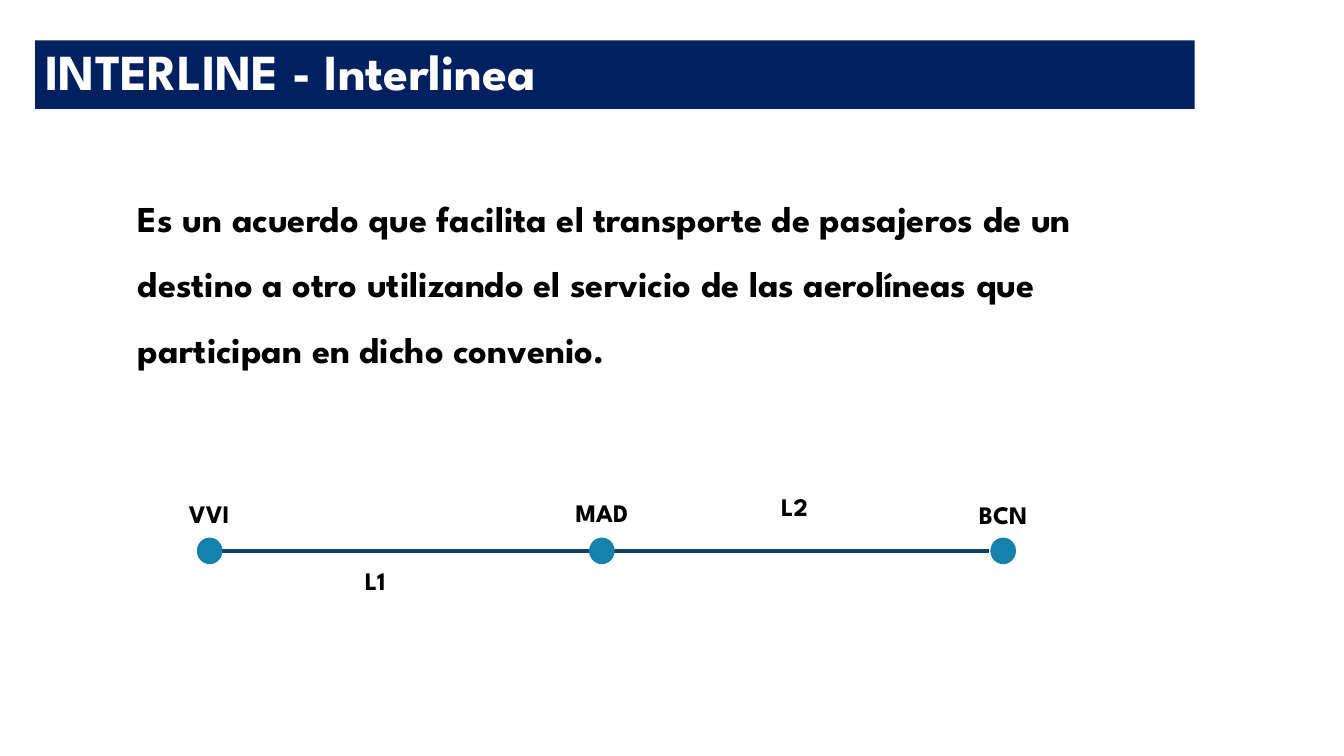
from lxml import etree
from pptx import Presentation
from pptx import util as u
from pptx.dml.color import RGBColor
from pptx.enum import shapes, text
from pptx.oxml.ns import qn

PX = 9144
FONT = "League Spartan"
COLORS = {
    "banner": "002060",
    "white": "FFFFFF",
    "black": "000000",
    "track": "134163",
    "stop": "1482AC",
    "stop_edge": "1580A9",
}


def px(*lengths):
    return [u.Emu(length * PX) for length in lengths]


def color(name):
    return RGBColor.from_string(COLORS[name])


def write(frame, words, size=18, ink="black", align=text.PP_ALIGN.LEFT,
          spacing=None, anchor=text.MSO_ANCHOR.TOP):
    frame.word_wrap = True
    frame.vertical_anchor = anchor
    paragraph = frame.paragraphs[0]
    paragraph.alignment = align
    paragraph.line_spacing = spacing
    run = paragraph.add_run()
    run.text = words
    run.font.name = FONT
    run.font.size = u.Pt(size)
    run.font.bold = True
    run.font.color.rgb = color(ink)


def label(slide, box, words, **style):
    frame = slide.shapes.add_textbox(*px(*box)).text_frame
    write(frame, words, **style)
    frame.auto_size = text.MSO_AUTO_SIZE.SHAPE_TO_FIT_TEXT


def filled(slide, kind, box, fill, edge=None):
    shape = slide.shapes.add_shape(kind, *px(*box))
    shape.shadow.inherit = False
    shape.fill.solid()
    shape.fill.fore_color.rgb = color(fill)
    if edge:
        shape.line.color.rgb = color(edge)
        shape.line.width = u.Pt(1)
    else:
        shape.line.fill.background()
    return shape


def title_banner(slide, box):
    banner = filled(slide, shapes.MSO_SHAPE.RECTANGLE, box, "banner")
    write(banner.text_frame, "INTERLINE - Interlinea", size=36, ink="white",
          spacing=0.9, anchor=text.MSO_ANCHOR.MIDDLE)


def definition(slide, box):
    label(slide, box,
          "Es un acuerdo que facilita el transporte de pasajeros de un destino "
          "a otro utilizando el servicio de las aerolíneas que participan en "
          "dicho convenio.", size=26, spacing=1.5)


def route_map(slide, box):
    left, top, width, height = box
    dot_width, dot_height = 24, 25
    track_y = top + 64
    track = slide.shapes.add_connector(
        shapes.MSO_CONNECTOR.STRAIGHT,
        *px(left + dot_width, track_y, left + width - dot_width - 2, track_y))
    track.line.color.rgb = color("track")
    track.line.width = u.Pt(3)
    etree.SubElement(track._element.spPr, qn("a:effectLst"))

    airports = [("VVI", 0, 75, 6), ("MAD", 389, 84, 5),
                ("BCN", width - dot_width, 84, 7)]
    for airport, offset, label_width, drop in airports:
        x = left + offset
        filled(slide, shapes.MSO_SHAPE.OVAL,
               (x, track_y - 13, dot_width, dot_height), "stop", "stop_edge")
        label(slide, (x + (dot_width - label_width) // 2, top + drop,
                      label_width, 40), airport, align=text.PP_ALIGN.CENTER)

    for carrier, offset, drop in [("L1", 156, height - 40), ("L2", 569, 0)]:
        label(slide, (left + offset, top + drop, 75, 40), carrier)


def main():
    deck = Presentation()
    deck.slide_width, deck.slide_height = px(1333, 750)
    slide = deck.slides.add_slide(deck.slide_layouts[6])
    title_banner(slide, (35, 40, 1150, 68))
    definition(slide, (127, 168, 1045, 273))
    route_map(slide, (196, 483, 811, 113))
    deck.save("out.pptx")


if __name__ == "__main__":
    main()
